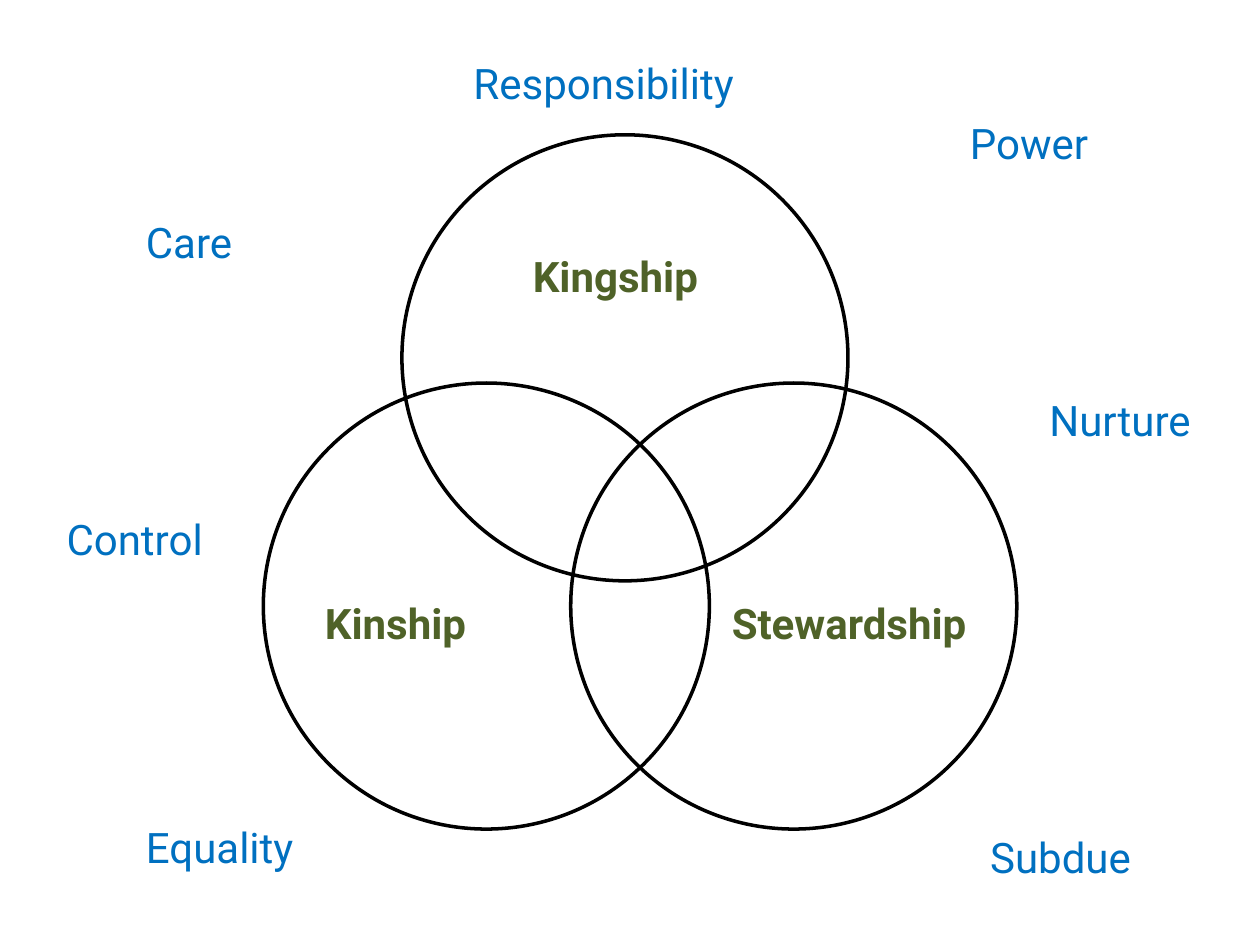
from typing import NamedTuple

import pptx
import pptx.dml.color
import pptx.enum.shapes
import pptx.enum.text
import pptx.util

Inches = pptx.util.Inches
RGBColor = pptx.dml.color.RGBColor

BLUE = RGBColor(0x00, 0x70, 0xC0)
GREEN = RGBColor(0x4F, 0x62, 0x28)
BLACK = RGBColor(0x00, 0x00, 0x00)

DIAMETER = 3.54
THEME_HEIGHT = 0.62
ROLE_HEIGHT = 0.5
FONT = {"name": "Roboto", "size": pptx.util.Pt(24)}


class Label(NamedTuple):
    text: str
    left: float
    top: float
    width: float


class Circle(NamedTuple):
    left: float
    top: float


THEMES = [
    Label("Care", 1.06, 1.47, 1.1),
    Label("Control", 0.43, 3.83, 1.42),
    Label("Responsibility", 3.66, 0.21, 2.36),
    Label("Power", 7.6, 0.68, 1.34),
    Label("Nurture", 8.23, 2.88, 1.42),
    Label("Subdue", 7.76, 6.35, 1.65),
    Label("Equality", 1.06, 6.27, 1.42),
]
CIRCLES = [Circle(3.19, 1.07), Circle(2.09, 3.04), Circle(4.53, 3.04)]
ROLES = [
    Label("Kingship", 4.13, 1.94, 1.65),
    Label("Kinship", 2.48, 4.69, 1.65),
    Label("Stewardship", 5.71, 4.69, 2.36),
]


def add_label(page, label: Label, height: float, color: RGBColor,
              bold: bool, line_spacing: float) -> None:
    box = page.shapes.add_textbox(Inches(label.left), Inches(label.top),
                                  Inches(label.width), Inches(height))
    frame = box.text_frame
    frame.word_wrap = True
    frame.auto_size = pptx.enum.text.MSO_AUTO_SIZE.SHAPE_TO_FIT_TEXT
    para = frame.paragraphs[0]
    para.line_spacing = line_spacing
    span = para.add_run()
    span.text = label.text
    for name, value in {**FONT, "bold": bold}.items():
        setattr(span.font, name, value)
    span.font.color.rgb = color


def add_circle(group, circle: Circle) -> None:
    shape = group.shapes.add_shape(
        pptx.enum.shapes.MSO_SHAPE.OVAL, Inches(circle.left),
        Inches(circle.top), Inches(DIAMETER), Inches(DIAMETER))
    shape.shadow.inherit = False
    shape.fill.background()
    shape.line.color.rgb = BLACK
    shape.line.width = pptx.util.Pt(2)


def main() -> None:
    deck = pptx.Presentation()
    deck.slide_width, deck.slide_height = Inches(10), Inches(7.5)
    page = deck.slides.add_slide(deck.slide_layouts[6])

    for theme in THEMES:
        add_label(page, theme, THEME_HEIGHT, BLUE, False, 1.5)
    venn = page.shapes.add_group_shape()
    for circle in CIRCLES:
        add_circle(venn, circle)
    for role in ROLES:
        add_label(page, role, ROLE_HEIGHT, GREEN, True, 1.0)

    deck.save("out.pptx")


if __name__ == "__main__":
    main()
